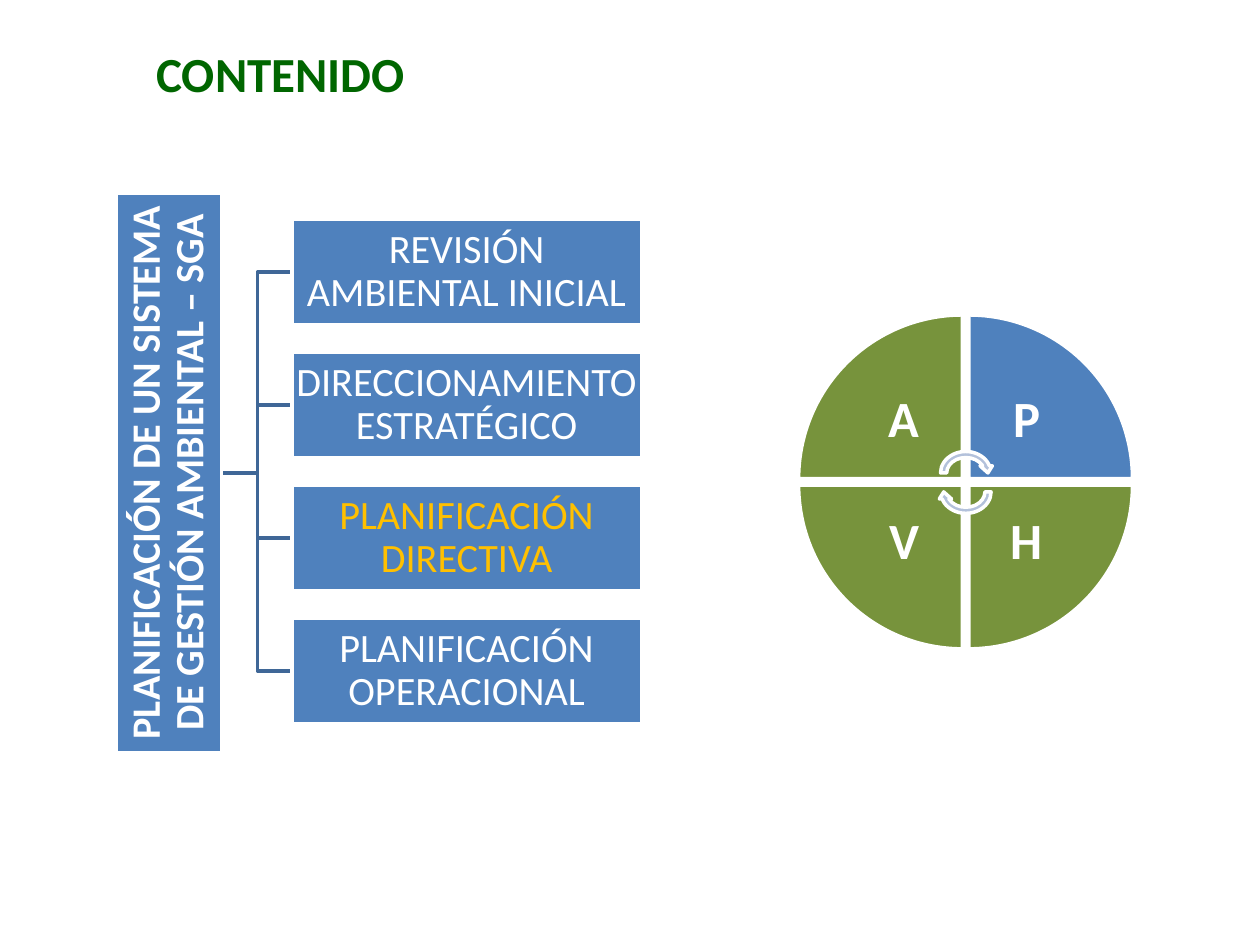
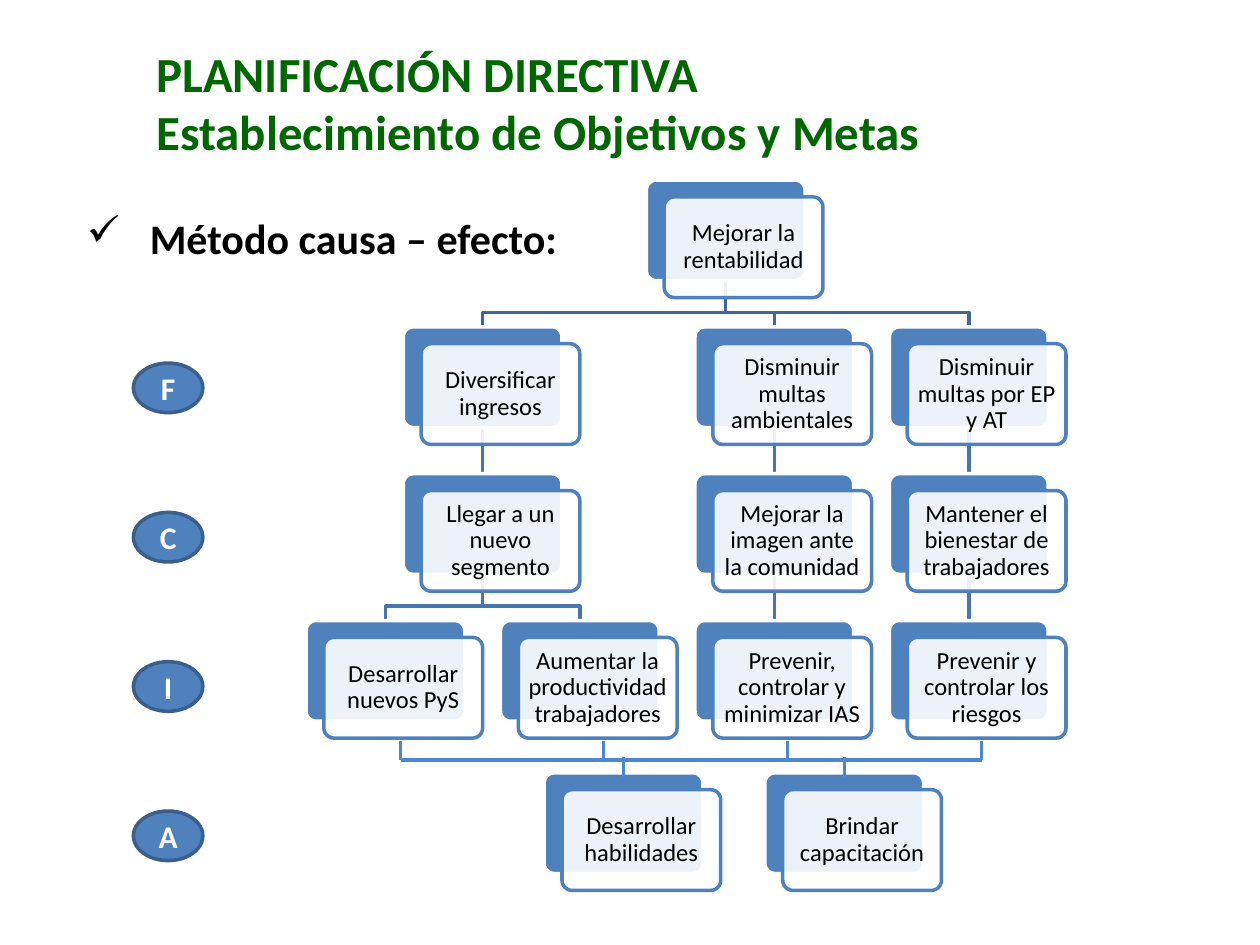
from dataclasses import dataclass

from lxml.etree import SubElement
from pptx import Presentation
from pptx.dml.color import RGBColor
from pptx.enum.shapes import MSO_CONNECTOR as Connector, MSO_SHAPE as Preset
from pptx.enum.text import MSO_ANCHOR as Anchor, MSO_AUTO_SIZE as AutoSize, PP_ALIGN as Align
from pptx.oxml.ns import qn
from pptx.util import Cm, Pt


@dataclass(frozen=True)
class Theme:
    """Colours, font and type sizes shared by both slides."""
    font: str = "Calibri"
    title: str = "006600"
    blue: str = "4F81BD"
    green: str = "77933C"
    gold: str = "FFC000"
    white: str = "FFFFFF"
    black: str = "000000"
    arrow: str = "B3C1DB"
    trunk: str = "3F6797"
    branch: str = "4875AC"
    bus: str = "4A88D2"
    badge_edge: str = "3A5F8C"
    title_size: int = 28
    wedge_size: int = 29
    method_size: int = 24
    box_size: int = 23
    badge_size: int = 18
    card_size: int = 14
    line: float = 2
    bus_line: float = 1.75


THEME = Theme()
STAGES = [
    ("REVISIÓN AMBIENTAL INICIAL", THEME.white),
    ("DIRECCIONAMIENTO ESTRATÉGICO", THEME.white),
    ("PLANIFICACIÓN DIRECTIVA", THEME.gold),
    ("PLANIFICACIÓN OPERACIONAL", THEME.white),
]
WEDGES = [
    ("A", 0, 0, THEME.green),
    ("P", 1, 0, THEME.blue),
    ("H", 1, 1, THEME.green),
    ("V", 0, 1, THEME.green),
]
GOALS = [
    (1.75, 0, "Mejorar la rentabilidad"),
    (0.5, 1, "Diversificar ingresos"),
    (0.5, 2, "Llegar a un nuevo segmento"),
    (0, 3, "Desarrollar nuevos PyS"),
    (1, 3, "Aumentar la productividad trabajadores"),
    (2, 1, "Disminuir multas ambientales"),
    (2, 2, "Mejorar la imagen ante la comunidad"),
    (2, 3, "Prevenir, controlar y minimizar IAS"),
    (3, 1, "Disminuir multas por EP y AT"),
    (3, 2, "Mantener el bienestar de trabajadores"),
    (3, 3, "Prevenir y controlar los riesgos"),
]
LINKS = [
    (1.75, 0, 0.5), (1.75, 0, 2), (1.75, 0, 3),
    (0.5, 1, 0.5), (2, 1, 2), (3, 1, 3),
    (0.5, 2, 0), (0.5, 2, 1), (2, 2, 2), (3, 2, 3),
]
SKILLS = [(12.57, "Desarrollar habilidades"), (17.02, "Brindar capacitación")]
CARD_W, CARD_H = 3.2, 2.03


def goal_x(column):
    """Return the centre of a goal column in centimetres."""
    return 7.77 + 3.92 * column


def goal_y(row):
    """Return the top of a goal row in centimetres."""
    return 3.63 + 2.96 * row


def rgb(colour):
    """Turn a hex string into a colour."""
    return RGBColor.from_string(colour)


def write(frame, lines, size, colour, bold=False, align=Align.CENTER, spacing=None, inset=None):
    """Fill a text frame with equally formatted paragraphs."""
    frame.word_wrap = True
    frame.auto_size = AutoSize.NONE
    if inset is not None:
        frame.margin_left = frame.margin_right = Cm(inset)
        frame.margin_top = frame.margin_bottom = Cm(inset)
    frame.text = "\n".join(lines)
    for paragraph in frame.paragraphs:
        paragraph.alignment = align
        paragraph.line_spacing = spacing
        font = paragraph.font
        font.name, font.size, font.bold = THEME.font, Pt(size), bold
        font.color.rgb = rgb(colour)


def add_titled_slide(deck, *lines):
    """Add a title-only slide with the shared green heading."""
    slide = deck.slides.add_slide(deck.slide_layouts[5])
    heading = slide.shapes.title
    heading.left, heading.top = Cm(2.9), Cm(0.74)
    heading.width, heading.height = Cm(21.84), Cm(2.64)
    heading.text_frame.vertical_anchor = Anchor.TOP
    write(heading.text_frame, lines, THEME.title_size, THEME.title, True, Align.LEFT)
    return slide


def add_figure(slide, preset, left, top, width, height, fill, edge=THEME.white, turn=0):
    """Add a flat preset shape."""
    figure = slide.shapes.add_shape(preset, Cm(left), Cm(top), Cm(width), Cm(height))
    figure.shadow.inherit = False
    figure.fill.solid()
    figure.fill.fore_color.rgb = rgb(fill)
    figure.line.color.rgb = rgb(edge)
    figure.line.width = Pt(THEME.line)
    figure.rotation = turn
    return figure


def add_box(slide, left, top, width, height, text, colour=THEME.white, bold=False, turn=0):
    """Add a blue labelled box."""
    box = add_figure(slide, Preset.RECTANGLE, left, top, width, height, THEME.blue, turn=turn)
    box.text_frame.vertical_anchor = Anchor.MIDDLE
    write(box.text_frame, [text], THEME.box_size, colour, bold, spacing=0.9, inset=0.04)


def add_elbow(slide, points, colour):
    """Draw an open bent wire through the points."""
    start, *rest = [(Cm(x), Cm(y)) for x, y in points]
    builder = slide.shapes.build_freeform(*start)
    builder.add_line_segments(rest, close=False)
    wire = builder.convert_to_shape()
    wire.shadow.inherit = False
    wire.fill.background()
    wire.line.color.rgb = rgb(colour)
    wire.line.width = Pt(THEME.line)


def add_wire(slide, x1, y1, x2, y2, colour, width):
    """Draw a straight wire."""
    wire = slide.shapes.add_connector(Connector.STRAIGHT, Cm(x1), Cm(y1), Cm(x2), Cm(y2))
    SubElement(wire._element.spPr, qn("a:effectLst"))
    wire.line.color.rgb = rgb(colour)
    wire.line.width = Pt(width)


def add_wedge(slide, letter, column, row, colour, turn):
    """Add one quarter of the cycle with its letter near the centre."""
    size, label, pitch = 3.3, 2.34, 3.43
    left, top = 16.1 + pitch * column, 6.35 + pitch * row
    add_figure(slide, Preset.PIE_WEDGE, left, top, size, size, colour, turn=turn)
    shift = size - label
    tag = slide.shapes.add_textbox(
        Cm(left + shift * (1 - column)), Cm(top + shift * (1 - row)), Cm(label), Cm(label))
    tag.text_frame.vertical_anchor = Anchor.MIDDLE
    write(tag.text_frame, [letter], THEME.wedge_size, THEME.white, True, spacing=0.9, inset=0.58)


def add_card(slide, centre, top, text):
    """Add a blue card with a translucent labelled card in front."""
    left = centre - CARD_W / 2
    back = add_figure(slide, Preset.ROUNDED_RECTANGLE, left, top, CARD_W, CARD_H, THEME.blue)
    front = add_figure(slide, Preset.ROUNDED_RECTANGLE, left + 0.36, top + 0.34,
                       CARD_W, CARD_H, THEME.white, THEME.blue)
    for layer in (back, front):
        layer.adjustments[0] = 0.1
    tint = front._element.spPr.find(qn("a:solidFill")).find(qn("a:srgbClr"))
    SubElement(tint, qn("a:alpha"), val="90000")
    front.text_frame.vertical_anchor = Anchor.MIDDLE
    write(front.text_frame, [text], THEME.card_size, THEME.black, spacing=0.9, inset=0.12)


def add_link(slide, parent, row, child):
    """Join a goal to one in the next row."""
    x1, x2 = goal_x(parent), goal_x(child)
    y1, y2 = goal_y(row) + CARD_H, goal_y(row + 1)
    colour = THEME.branch if row else THEME.trunk
    if parent == child:
        add_wire(slide, x1, y1, x2, y2, colour, THEME.line)
    else:
        bend = y1 + 0.64
        add_elbow(slide, [(x1, y1), (x1, bend), (x2, bend), (x2, y2)], colour)


def add_badge(slide, top, letter):
    """Add an oval perspective mark."""
    badge = add_figure(slide, Preset.OVAL, 2.69, top, 1.4, 1, THEME.blue, THEME.badge_edge)
    badge.text_frame.vertical_anchor = Anchor.MIDDLE
    write(badge.text_frame, [letter], THEME.badge_size, THEME.white, True)


def add_method(slide, text):
    """Add the check-marked method line."""
    method = slide.shapes.add_textbox(Cm(1.5), Cm(4.15), Cm(22.6), Cm(1.7))
    write(method.text_frame, [text], THEME.method_size, THEME.black, True, Align.LEFT)
    indent = method.text_frame.paragraphs[0]._p.get_or_add_pPr()
    indent.set("marL", str(Cm(1.27)))
    indent.set("indent", str(-Cm(1.27)))
    mark = SubElement(indent, qn("a:buChar"), char="✓")
    indent.insert(0, mark)


def build_contents(deck):
    """Build the contents slide with its tree and cycle."""
    slide = add_titled_slide(deck, "CONTENIDO")
    box_left, box_height, middle = 5.89, 2.13, 9.53
    tops = [4.42 + 2.68 * row for row in range(len(STAGES))]
    for top in tops:
        y = top + box_height / 2
        add_elbow(slide, [(4.5, middle), (5.19, middle), (5.19, y), (box_left, y)], THEME.trunk)
    add_box(slide, -2.24, 8.46, 11.28, box_height,
            "PLANIFICACIÓN DE UN SISTEMA DE GESTIÓN AMBIENTAL – SGA", bold=True, turn=270)
    for top, (stage, colour) in zip(tops, STAGES):
        add_box(slide, box_left, top, 7.04, box_height, stage, colour)
    for quarter, wedge in enumerate(WEDGES):
        add_wedge(slide, *wedge, turn=90 * quarter)
    for top, turn in ((9.04, 0), (9.42, 180)):
        add_figure(slide, Preset.CIRCULAR_ARROW, 18.9, top, 1.14, 0.99, THEME.arrow, turn=turn)


def build_objectives(deck):
    """Build the cause and effect slide."""
    slide = add_titled_slide(
        deck, "PLANIFICACIÓN DIRECTIVA", "Establecimiento de Objetivos y Metas")
    add_method(slide, "Método causa – efecto:")
    for link in LINKS:
        add_link(slide, *link)
    for column, row, goal in GOALS:
        add_card(slide, goal_x(column), goal_y(row), goal)
    for centre, skill in SKILLS:
        add_card(slide, centre, 15.58, skill)
    risers = [8.08, 12.17, 15.88, 19.79]
    bus_y = 15.32
    runs = [(risers[0], bus_y, risers[-1], bus_y)]
    runs += [(x, 14.94, x, bus_y) for x in risers]
    runs += [(x, 15.27, x, 15.67) for x, _ in SKILLS]
    for run in runs:
        add_wire(slide, *run, THEME.bus, THEME.bus_line)
    for row, letter in enumerate("FCIA"):
        add_badge(slide, 7.32 + 3.01 * row, letter)


def main():
    """Build and save both slides."""
    deck = Presentation()
    deck.slide_width, deck.slide_height = Cm(25.4), Cm(19.05)
    build_contents(deck)
    build_objectives(deck)
    deck.save("out.pptx")


if __name__ == "__main__":
    main()
